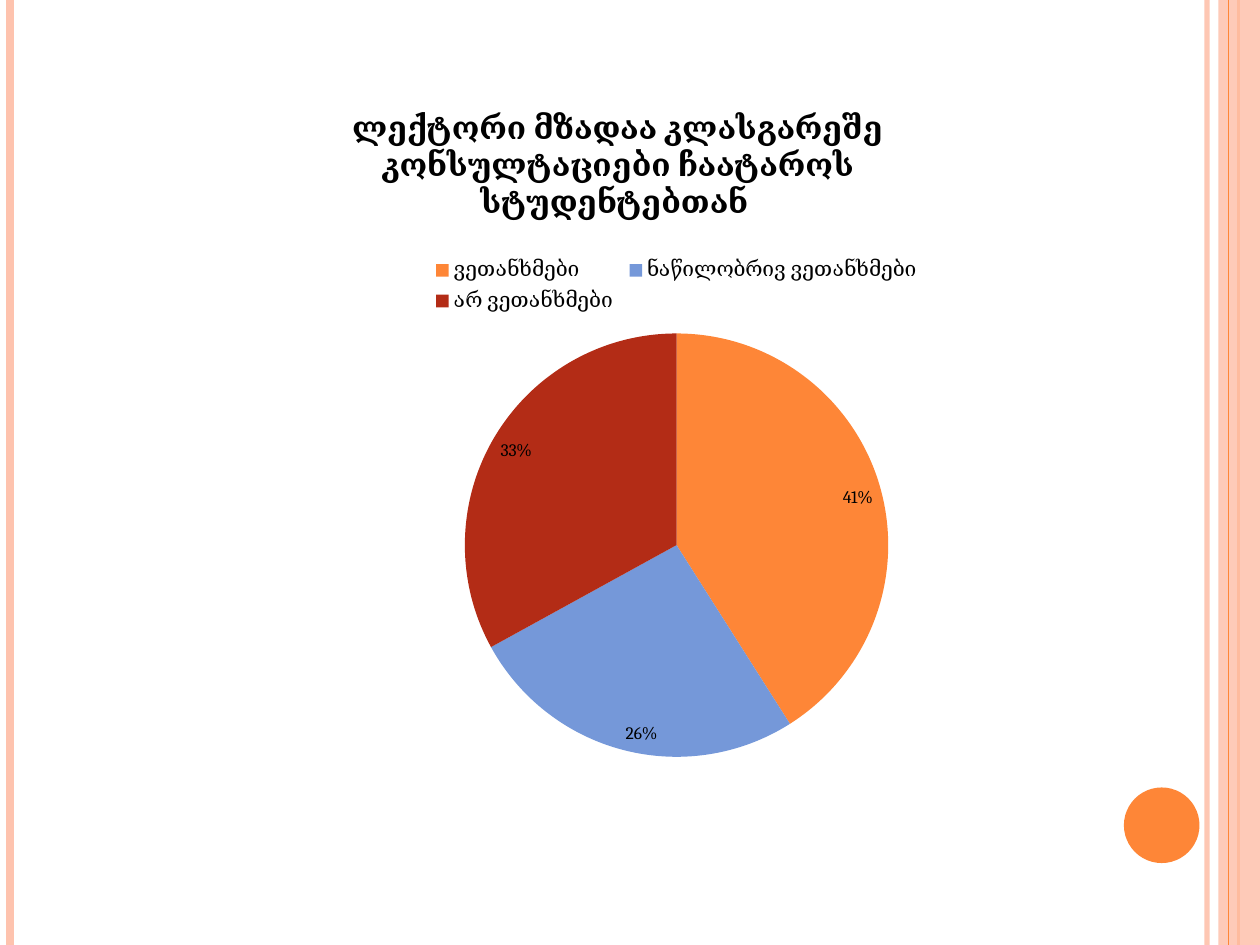
from lxml import etree
from pptx import Presentation
from pptx.chart.data import CategoryChartData
from pptx.dml.color import RGBColor
from pptx.enum.chart import XL_CHART_TYPE, XL_LABEL_POSITION, XL_LEGEND_POSITION
from pptx.enum.shapes import MSO_CONNECTOR, MSO_SHAPE
from pptx.oxml.ns import qn
from pptx.util import Inches, Pt

PIE = XL_CHART_TYPE.PIE
INSIDE_END = XL_LABEL_POSITION.INSIDE_END
LEGEND_TOP = XL_LEGEND_POSITION.TOP
STRAIGHT = MSO_CONNECTOR.STRAIGHT
RECTANGLE, OVAL = MSO_SHAPE.RECTANGLE, MSO_SHAPE.OVAL
WIDTH, HEIGHT = 10, 7.5

TITLE = "ლექტორი მზადაა კლასგარეშე კონსულტაციები ჩაატაროს სტუდენტებთან "
ANSWERS = {
    "ვეთანხმები": (41, "FE8637"),
    "ნაწილობრივ ვეთანხმები": (26, "7598D9"),
    "არ ვეთანხმები": (33, "B32C16"),
}


def color(hex_code):
    return RGBColor.from_string(hex_code)


def set_alpha(color_parent, percent):
    """Make the solid colour below the given element partly transparent."""
    srgb = color_parent.find(".//" + qn("a:srgbClr"))
    etree.SubElement(srgb, qn("a:alpha")).set("val", str(percent * 1000))


def format_font(font, size=10, bold=False, hex_code="000000", name="Cambria"):
    font.size, font.bold, font.name = Pt(size), bold, name
    font.color.rgb = color(hex_code)


def write_text(frame, text, **font_format):
    frame.text = text
    format_font(frame.paragraphs[0].runs[0].font, **font_format)


def place(part, index, **fractions):
    """Give a chart part a manual layout, in fractions of the chart area."""
    for old in part.findall(qn("c:layout")):
        part.remove(old)
    layout = etree.Element(qn("c:layout"))
    manual = etree.SubElement(layout, qn("c:manualLayout"))
    if part.tag == qn("c:plotArea"):
        etree.SubElement(manual, qn("c:layoutTarget")).set("val", "inner")
    for axis in "xy":
        etree.SubElement(manual, qn(f"c:{axis}Mode")).set("val", "edge")
    for key, value in fractions.items():
        etree.SubElement(manual, qn(f"c:{key}")).set("val", str(value))
    part.insert(index, layout)


class SlideBuilder:
    accent = "FE8637"
    pale = "FEC3AE"

    def __init__(self, slide):
        self.slide = slide

    def stripe(self, x, hex_code, width, alpha=None):
        """Draw a vertical line over the full slide height."""
        line = self.slide.shapes.add_connector(
            STRAIGHT, Inches(x), 0, Inches(x), Inches(HEIGHT))
        line.line.color.rgb = color(hex_code)
        line.line.width = Pt(width)
        properties = line._element.spPr
        if alpha:
            set_alpha(properties, alpha)
        etree.SubElement(properties, qn("a:effectLst"))

    def shape(self, preset, box, hex_code, alpha=None):
        shape = self.slide.shapes.add_shape(preset, *map(Inches, box))
        shape.shadow.inherit = False
        shape.fill.solid()
        shape.fill.fore_color.rgb = color(hex_code)
        shape.line.fill.background()
        if alpha:
            set_alpha(shape._element.spPr, alpha)

    def pie(self, box, title, answers):
        data = CategoryChartData()
        data.categories = list(answers)
        data.add_series("Series 1", [share for share, _ in answers.values()])
        chart = self.slide.shapes.add_chart(PIE, *map(Inches, box), data).chart
        format_font(chart.font)

        chart.has_title = True
        write_text(chart.chart_title.text_frame, title, size=18, bold=True)
        place(chart.chart_title._element, 1, x=0.13, y=0.01)

        chart.has_legend = True
        chart.legend.position = LEGEND_TOP
        chart.legend.include_in_layout = False
        format_font(chart.legend.font, size=12)
        place(chart.legend._element, 1, x=0.22, y=0.23, w=0.56, h=0.1)

        plot = chart.plots[0]
        plot.vary_by_categories = True
        plot.has_data_labels = True
        labels = plot.data_labels
        labels.show_percentage, labels.show_value = True, False
        labels.number_format, labels.number_format_is_linked = "0%", False
        labels.position = INSIDE_END
        format_font(labels.font)
        for index, (_, hex_code) in enumerate(answers.values()):
            fill = plot.series[0].points[index].format.fill
            fill.solid()
            fill.fore_color.rgb = color(hex_code)
        place(chart._chartSpace.chart.plotArea, 0, x=0.26, y=0.35, w=0.48, h=0.62)


def main():
    deck = Presentation()
    deck.slide_width, deck.slide_height = Inches(WIDTH), Inches(HEIGHT)
    builder = SlideBuilder(deck.slides.add_slide(deck.slide_layouts[6]))

    builder.stripe(9.58, builder.pale, 3, alpha=93)
    builder.stripe(0.08, builder.pale, 4.5)
    builder.stripe(9.83, builder.accent, 1.5)
    builder.shape(RECTANGLE, (9.67, 0, 0.33, HEIGHT), builder.pale, alpha=87)
    builder.stripe(9.75, builder.accent, 0.75)
    builder.shape(OVAL, (8.92, 6.25, 0.6, 0.6), builder.accent)
    builder.pie((1.83, 0.75, 7.08, 5.42), TITLE, ANSWERS)

    deck.save("out.pptx")


if __name__ == "__main__":
    main()
